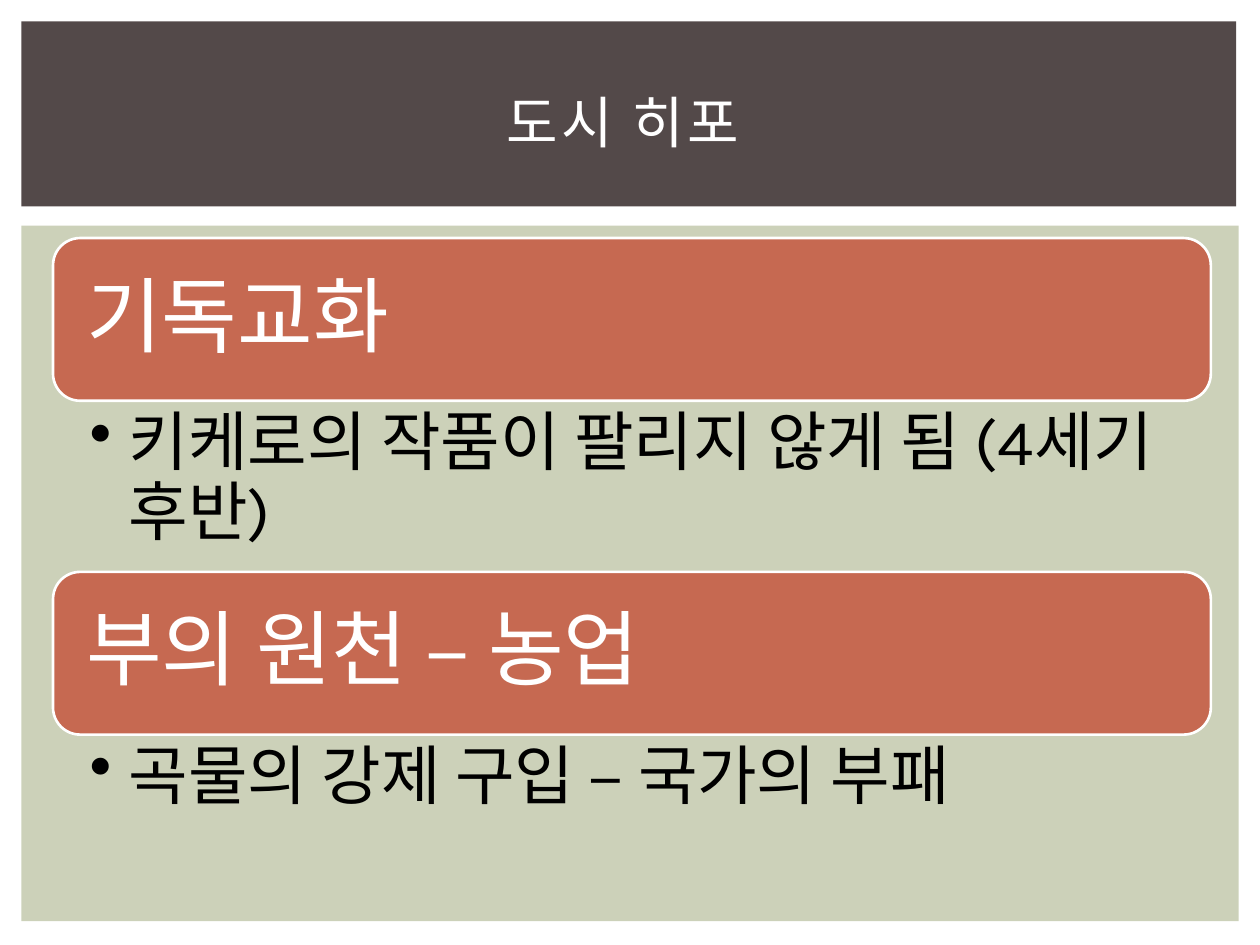
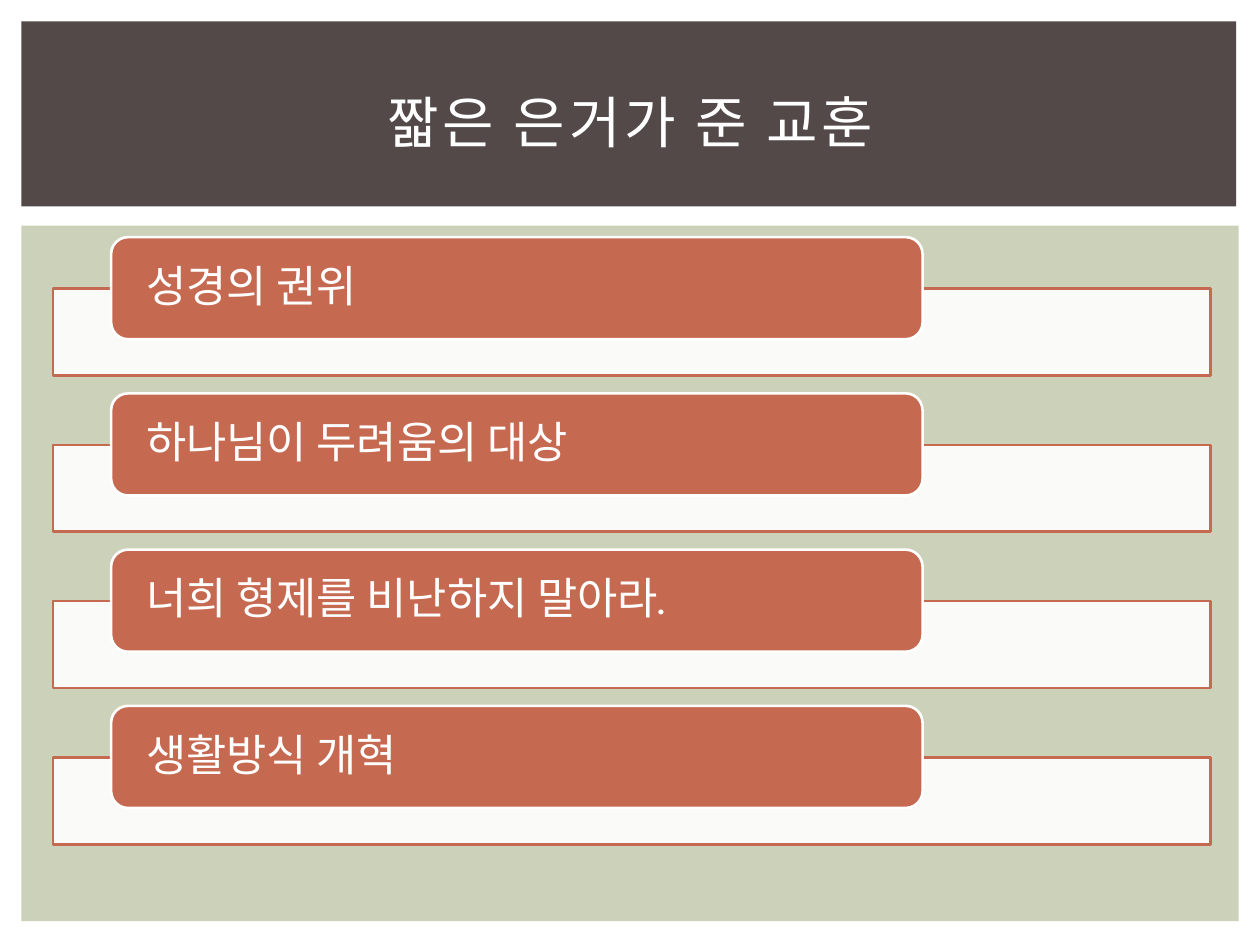
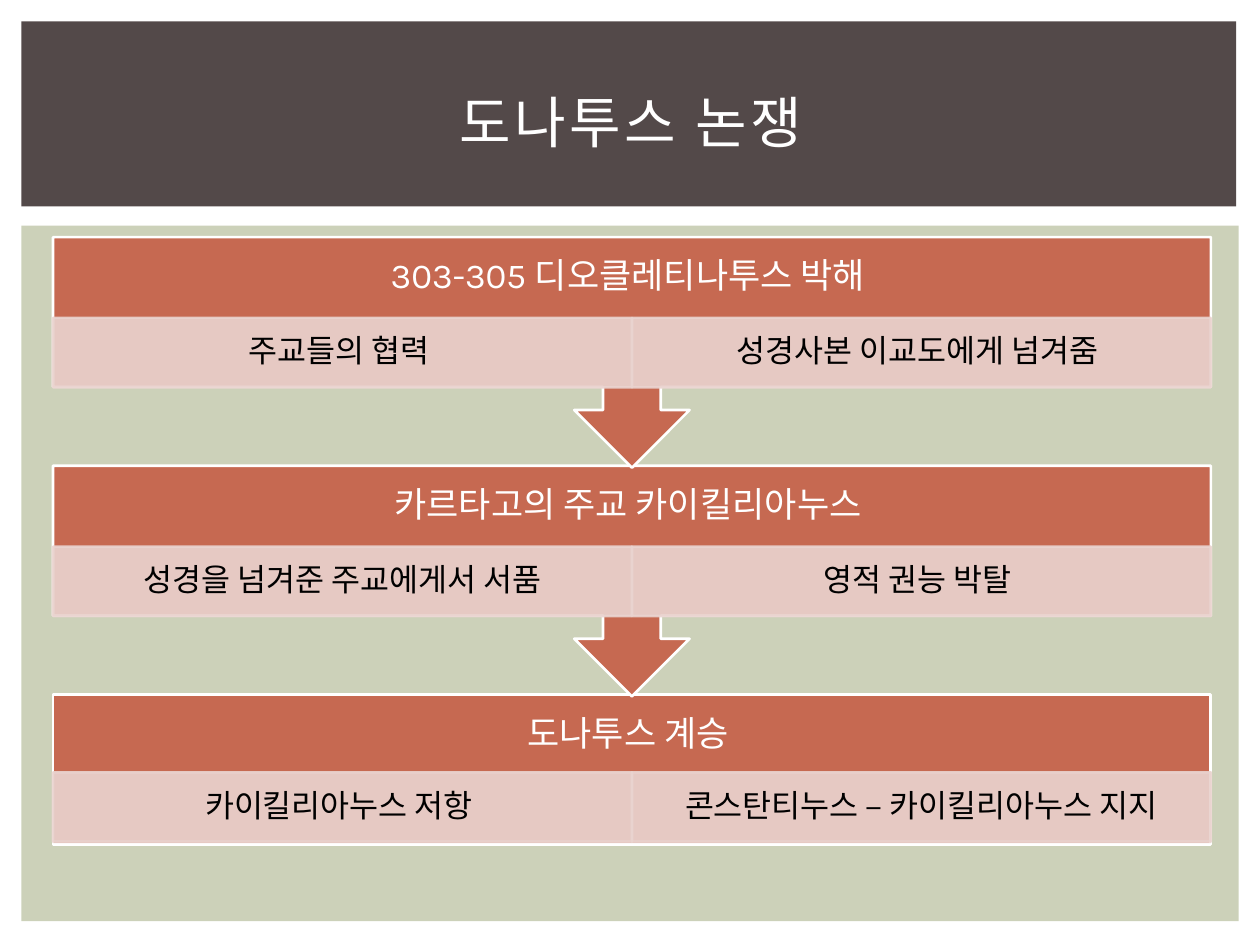
from pptx import Presentation
from pptx.dml.color import RGBColor
from pptx.enum import shapes, text
from pptx.oxml.ns import qn
from pptx.util import Cm, Pt
from lxml import etree

# Content
CITY = ("도시 히포 ", [
    ("기독교화", "키케로의 작품이 팔리지 않게 됨 (4세기 후반)"),
    ("부의 원천 – 농업", "곡물의 강제 구입 – 국가의 부패"),
])
LESSONS = ("짧은 은거가 준 교훈", [
    "성경의 권위",
    "하나님이 두려움의 대상",
    "너희 형제를 비난하지 말아라.",
    "생활방식 개혁",
])
DISPUTE = ("도나투스 논쟁", [
    ("303-305 디오클레티나투스 박해 ",
     ["주교들의 협력 ", "성경사본 이교도에게 넘겨줌 "]),
    ("카르타고의 주교 카이킬리아누스 ",
     ["성경을 넘겨준 주교에게서 서품", "영적 권능 박탈 "]),
    ("도나투스 계승 ",
     ["카이킬리아누스 저항 ", "콘스탄티누스 – 카이킬리아누스 지지"]),
])

# Shared style
FONT = "Karla"
WHITE = RGBColor(0xFF, 0xFF, 0xFF)
BLACK = RGBColor(0x00, 0x00, 0x00)
SAGE = RGBColor(0xCC, 0xD1, 0xB9)
BROWN = RGBColor(0x53, 0x49, 0x49)
BRICK = RGBColor(0xC6, 0x69, 0x51)
BLUSH = RGBColor(0xEA, 0xD4, 0xD0)
RECT = shapes.MSO_SHAPE.RECTANGLE
ROUNDED = shapes.MSO_SHAPE.ROUNDED_RECTANGLE
CALLOUT = shapes.MSO_SHAPE.DOWN_ARROW_CALLOUT
LEFT, WIDTH = 1.07, 23.34


def write(shape, words, size, color=WHITE, align=text.PP_ALIGN.LEFT,
          anchor=text.MSO_ANCHOR.MIDDLE, insets=None, line_spacing=0.9,
          tracking=0, hanging=0):
    frame = shape.text_frame
    frame.word_wrap = True
    frame.vertical_anchor = anchor
    if insets:
        (frame.margin_left, frame.margin_top,
         frame.margin_right, frame.margin_bottom) = map(Cm, insets)
    paragraph = frame.paragraphs[0]
    paragraph.alignment = align
    paragraph.line_spacing = line_spacing
    run = paragraph.add_run()
    run.text = words
    run.font.name, run.font.size = FONT, Pt(size)
    run.font.color.rgb = color
    if tracking:
        run._r.get_or_add_rPr().set("spc", str(tracking * 100))
    if hanging:
        props = paragraph._p.get_or_add_pPr()
        props.set("marL", str(Cm(hanging)))
        props.set("indent", str(-Cm(hanging)))
        etree.SubElement(props, qn("a:buChar")).set("char", "•")


def box(slide, kind, left, top, width, height, fill, line=None, opacity=100):
    """Add a filled shape; opacity applies wherever the fill colour is used."""
    shape = slide.shapes.add_shape(kind, Cm(left), Cm(top), Cm(width), Cm(height))
    shape.shadow.inherit = False
    shape.fill.solid()
    shape.fill.fore_color.rgb = fill
    if line is None:
        shape.line.fill.background()
    else:
        shape.line.color.rgb = line
        shape.line.width = Pt(1.5)
    if opacity < 100:
        for color in shape._element.spPr.iter(qn("a:srgbClr")):
            if color.get("val") == str(fill):
                etree.SubElement(color, qn("a:alpha")).set("val", str(opacity * 1000))
    return shape


def dress_layout(layout, slide):
    """Move the two bands behind the layout's title and place that title."""
    bands = [box(slide, RECT, 0.43, 4.55, 24.54, 14.02, SAGE),
             box(slide, RECT, 0.43, 0.43, 24.49, 3.73, BROWN)]
    for position, band in enumerate(bands, start=2):
        layout.shapes._spTree.insert(position, band._element)
    title = layout.placeholders[0]
    title.left, title.top, title.width, title.height = map(Cm, (LEFT, 0.99, 23.29, 2.92))


def add_titled(prs, title):
    slide = prs.slides.add_slide(prs.slide_layouts[5])
    write(slide.shapes.title, title, 32, align=text.PP_ALIGN.CENTER,
          line_spacing=1.0, tracking=2)
    return slide


def build_city(slide, topics):
    pitch, heading_height = 6.73, 3.28
    for i, (heading, detail) in enumerate(topics):
        top = 4.8 + i * pitch
        bar = box(slide, ROUNDED, LEFT, top, WIDTH, heading_height, BRICK, WHITE)
        write(bar, heading, 47, insets=(0.51,) * 4)
        note = slide.shapes.add_textbox(Cm(LEFT), Cm(top + heading_height),
                                        Cm(WIDTH), Cm(pitch - heading_height))
        write(note, detail, 37, color=BLACK, anchor=text.MSO_ANCHOR.TOP,
              insets=(0.74, 0.18, 0.94, 0.18), hanging=0.79)


def build_lessons(slide, lessons):
    for i, lesson in enumerate(lessons):
        top = 4.78 + i * 3.15
        box(slide, RECT, LEFT, top + 1.04, WIDTH, 1.75, WHITE, BRICK, opacity=90)
        label = box(slide, ROUNDED, 2.24, top, 16.36, 2.06, BRICK, WHITE)
        write(label, lesson, 25, insets=(0.61, 0, 0.61, 0))


def build_dispute(slide, stages):
    last = len(stages) - 1
    # Bottom stage first, so each arrow tip lies over the stage below it
    for i, (heading, facts) in reversed(list(enumerate(stages))):
        top = 4.78 + i * 4.61
        kind, height, facts_top = ((RECT, 3.02, 1.57) if i == last
                                   else (CALLOUT, 4.65, 1.63))
        stage = box(slide, kind, LEFT, top, WIDTH, height, BRICK, WHITE)
        write(stage, heading, 20, align=text.PP_ALIGN.CENTER,
              insets=(0.41, 0.1, 0.41, 1.49))
        fact_width = WIDTH / len(facts)
        for j, fact in enumerate(facts):
            cell = box(slide, RECT, LEFT + j * fact_width, top + facts_top,
                       fact_width, 1.4, BLUSH, BLUSH, opacity=90)
            write(cell, fact, 18, color=BLACK, align=text.PP_ALIGN.CENTER,
                  insets=(0.36, 0.08, 0.36, 0.08))


def main():
    prs = Presentation()
    prs.slide_width, prs.slide_height = Cm(25.4), Cm(19.05)
    parts = [(CITY, build_city), (LESSONS, build_lessons), (DISPUTE, build_dispute)]
    for (title, content), build in parts:
        build(add_titled(prs, title), content)
    dress_layout(prs.slide_layouts[5], prs.slides[0])
    prs.save("out.pptx")


if __name__ == "__main__":
    main()
